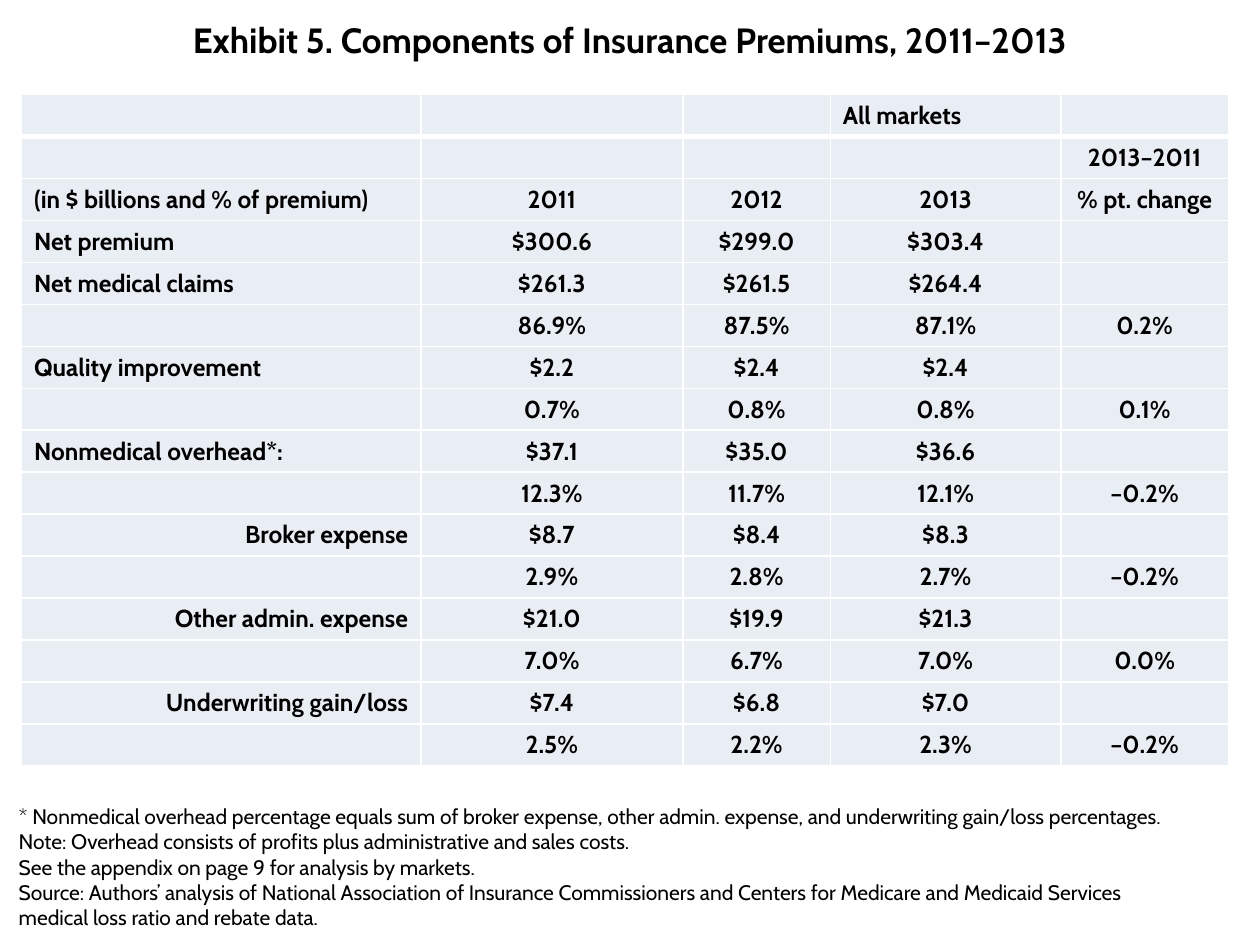
from typing import NamedTuple

from lxml.etree import SubElement
from pptx import Presentation
from pptx.dml.color import RGBColor
from pptx.enum.text import MSO_ANCHOR, MSO_AUTO_SIZE, PP_ALIGN
from pptx.oxml.ns import qn
from pptx.util import Inches, Pt

FONT = "Cabin"
BLACK, WHITE, PALE_BLUE = "000000", "FFFFFF", "E9EDF4"
COLUMN_WIDTHS = (3.17, 2.08, 1.17, 1.83, 1.33)
TABLE_HEIGHT = 5.33


class Row(NamedTuple):
    label: str = ""
    values: tuple = ("", "", "", "")
    label_align: PP_ALIGN = PP_ALIGN.LEFT
    value_align: PP_ALIGN = PP_ALIGN.CENTER


class Component(NamedTuple):
    label: str
    dollars: tuple
    percents: tuple
    change: str
    align: PP_ALIGN = PP_ALIGN.LEFT

    def rows(self) -> list:
        return [Row(self.label, (*self.dollars, ""), self.align),
                Row("", (*self.percents, self.change))]


HEADER_ROWS = [
    Row(values=("", "", "All markets", ""), value_align=PP_ALIGN.LEFT),
    Row(values=("", "", "", "2013–2011")),
    Row("(in $ billions and % of premium)", ("2011", "2012", "2013", "% pt. change")),
    Row("Net premium", ("$300.6", "$299.0", "$303.4", "")),
]
COMPONENTS = [
    Component("Net medical claims", ("$261.3", "$261.5", "$264.4"),
              ("86.9%", "87.5%", "87.1%"), "0.2%"),
    Component("Quality improvement", ("$2.2", "$2.4", "$2.4"),
              ("0.7%", "0.8%", "0.8%"), "0.1%"),
    Component("Nonmedical overhead*:", ("$37.1", "$35.0", "$36.6"),
              ("12.3%", "11.7%", "12.1%"), "–0.2%"),
    Component("Broker expense", ("$8.7", "$8.4", "$8.3"),
              ("2.9%", "2.8%", "2.7%"), "–0.2%", PP_ALIGN.RIGHT),
    Component("Other admin. expense", ("$21.0", "$19.9", "$21.3"),
              ("7.0%", "6.7%", "7.0%"), "0.0%", PP_ALIGN.RIGHT),
    Component("Underwriting gain/loss", ("$7.4", "$6.8", "$7.0"),
              ("2.5%", "2.2%", "2.3%"), "–0.2%", PP_ALIGN.RIGHT),
]
# Each footnote is a paragraph, given as its lines
FOOTNOTES = [
    ("* Nonmedical overhead percentage equals sum of broker expense, "
     "other admin. expense, and underwriting gain/loss percentages.",),
    ("Note: Overhead consists of profits plus administrative and sales costs.",),
    ("See the appendix on page 9 for analysis by markets.",),
    ("Source: Authors’ analysis of National Association of Insurance Commissioners "
     "and Centers for Medicare and Medicaid Services ",
     "medical loss ratio and rebate data."),
]


def rgb(color: str) -> RGBColor:
    return RGBColor.from_string(color)


def style(paragraph, size: float, bold: bool, align: PP_ALIGN) -> None:
    font = paragraph.font
    font.name, font.size, font.bold = FONT, Pt(size), bold
    font.color.rgb = rgb(BLACK)
    paragraph.alignment = align


def set_borders(cell, top: float, bottom: float) -> None:
    properties = cell._tc.get_or_add_tcPr()
    widths = {"a:lnL": 1, "a:lnR": 1, "a:lnT": top, "a:lnB": bottom}
    for tag, width in widths.items():
        line = SubElement(properties, qn(tag), w=str(Pt(width)))
        SubElement(SubElement(line, qn("a:solidFill")), qn("a:srgbClr"), val=WHITE)


def fill_cell(cell, text: str, align: PP_ALIGN, top: float, bottom: float) -> None:
    set_borders(cell, top, bottom)
    cell.fill.solid()
    cell.fill.fore_color.rgb = rgb(PALE_BLUE)
    cell.margin_top = cell.margin_bottom = 0
    cell.vertical_anchor = MSO_ANCHOR.MIDDLE
    paragraph = cell.text_frame.paragraphs[0]
    if text:
        paragraph.text = text
    style(paragraph, 14, True, align)


def add_title(slide, text: str) -> None:
    title = slide.shapes.title
    title.left, title.top = Inches(0), Inches(0.1)
    title.width, title.height = Inches(10), Inches(0.8)
    frame = title.text_frame
    frame.text = text
    frame.auto_size = MSO_AUTO_SIZE.NONE
    frame.vertical_anchor = MSO_ANCHOR.TOP
    style(frame.paragraphs[0], 20, True, PP_ALIGN.CENTER)


def add_footnotes(slide, notes: list) -> None:
    box = slide.shapes.add_textbox(Inches(0.05), Inches(6.33), Inches(9.34), Inches(1.11))
    frame = box.text_frame
    frame.word_wrap = False
    frame.auto_size = MSO_AUTO_SIZE.SHAPE_TO_FIT_TEXT
    for index, lines in enumerate(notes):
        paragraph = frame.add_paragraph() if index else frame.paragraphs[0]
        style(paragraph, 12, False, PP_ALIGN.LEFT)
        for line_index, line in enumerate(lines):
            if line_index:
                paragraph.add_line_break()
            paragraph.add_run().text = line


def add_premium_table(slide, rows: list) -> None:
    table = slide.shapes.add_table(
        len(rows), len(COLUMN_WIDTHS), Inches(0.17), Inches(0.75),
        Inches(sum(COLUMN_WIDTHS)), Inches(TABLE_HEIGHT)).table
    table.first_row = table.horz_banding = False
    for column, width in zip(table.columns, COLUMN_WIDTHS):
        column.width = Inches(width)
    for index, row in enumerate(rows):
        table.rows[index].height = Inches(TABLE_HEIGHT / len(rows))
        # A heavier rule separates the first row from the rest
        top, bottom = (3 if index == 1 else 1), (3 if index == 0 else 1)
        for column, text in enumerate((row.label, *row.values)):
            align = row.value_align if column else row.label_align
            fill_cell(table.cell(index, column), text, align, top, bottom)


def main() -> None:
    presentation = Presentation()
    presentation.slide_width, presentation.slide_height = Inches(10), Inches(7.5)
    slide = presentation.slides.add_slide(presentation.slide_layouts.get_by_name("Title Only"))
    add_title(slide, "Exhibit 5. Components of Insurance Premiums, 2011–2013")
    add_footnotes(slide, FOOTNOTES)
    component_rows = [row for component in COMPONENTS for row in component.rows()]
    add_premium_table(slide, HEADER_ROWS + component_rows)
    presentation.save("out.pptx")


if __name__ == "__main__":
    main()
